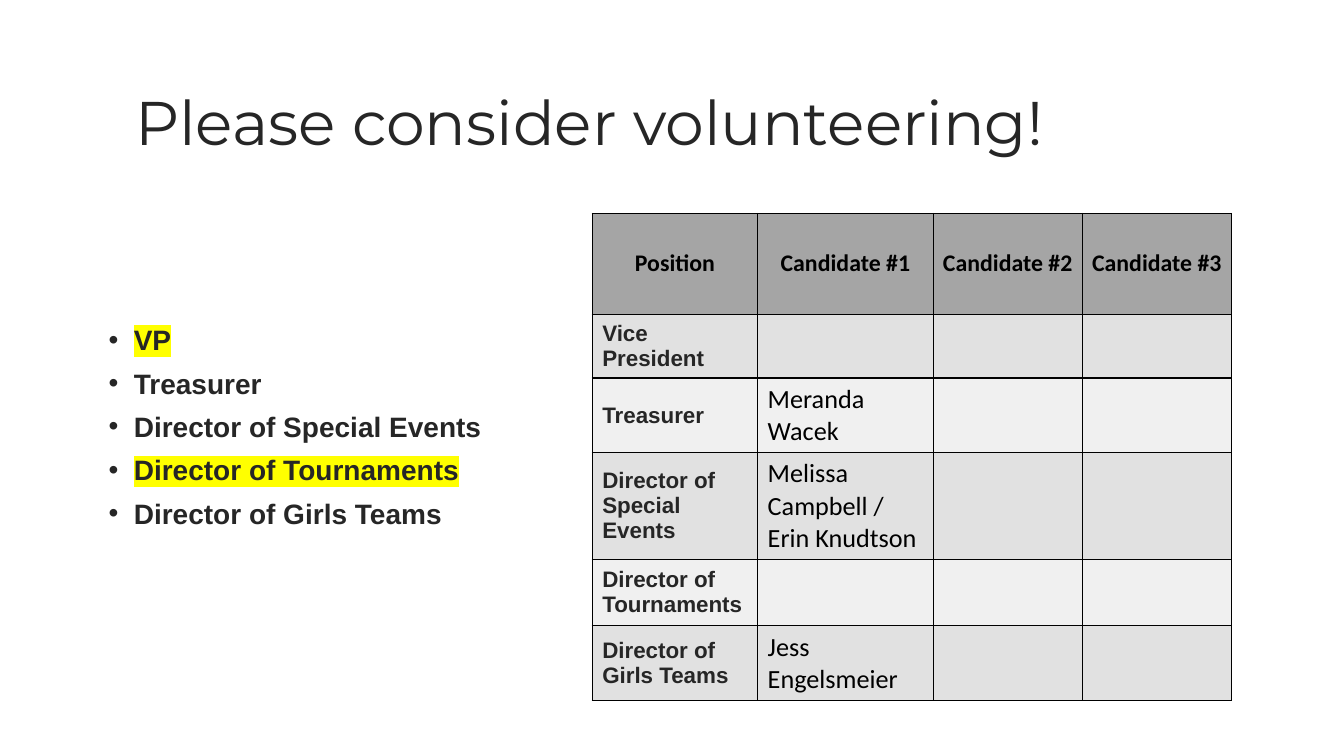
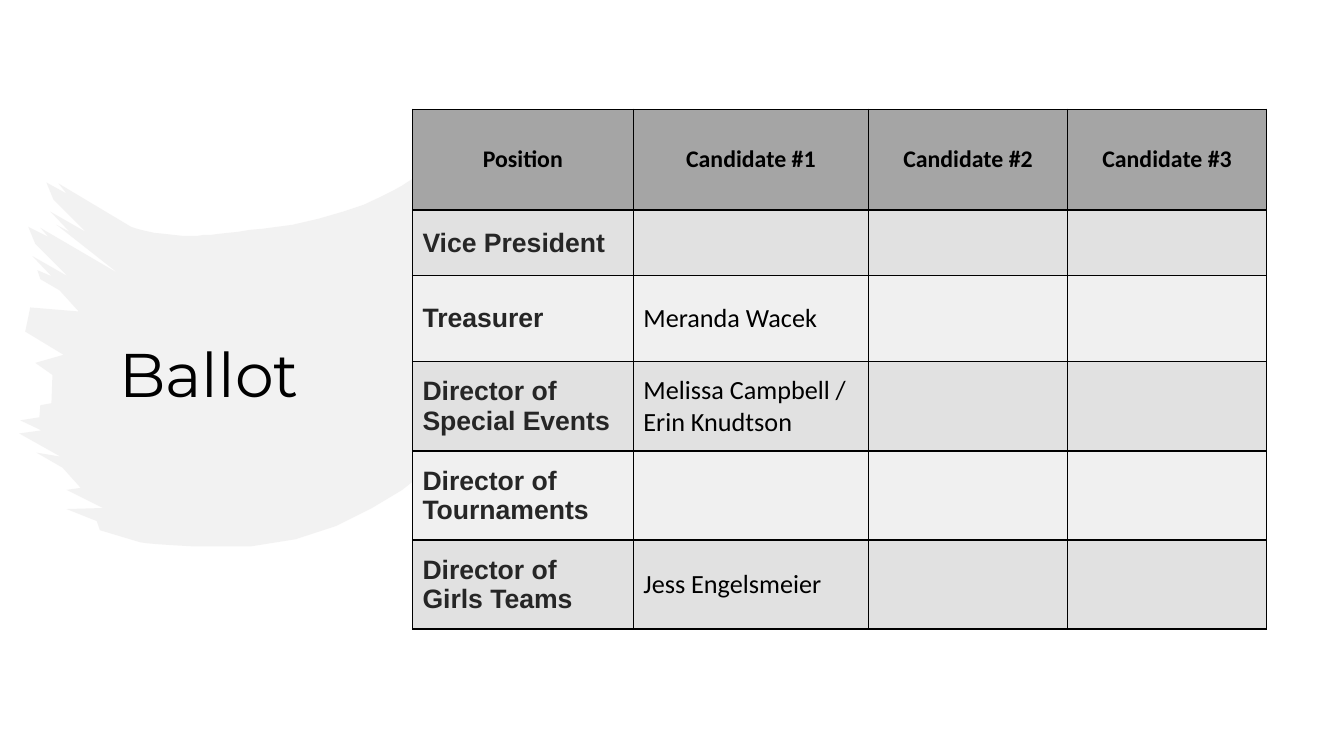
from dataclasses import dataclass

from lxml import etree
from pptx import Presentation
from pptx.dml.color import RGBColor
from pptx.enum.text import MSO_ANCHOR, PP_ALIGN
from pptx.oxml.ns import qn
from pptx.util import Inches, Pt

MIDDLE = MSO_ANCHOR.MIDDLE
CENTER = PP_ALIGN.CENTER
LEFT = PP_ALIGN.LEFT
GRID_COLUMNS, GRID_ROWS = 160, 90
BLANK_LAYOUT = 6


@dataclass(frozen=True)
class Theme:
    dark: str = "262626"
    black: str = "000000"
    header_fill: str = "A5A5A5"
    odd_fill: str = "E1E1E1"
    even_fill: str = "F0F0F0"
    brush_fill: str = "E7E6E6"
    highlight: str = "FFFF00"
    title_font: str = "Montserrat"
    label_font: str = "Arial"
    table_font: str = "Calibri"
    title_size: float = 44
    bullet_size: float = 20
    header_size: float = 17
    name_size: float = 18.7


HEADERS = ["Position", "Candidate #1", "Candidate #2", "Candidate #3"]
CANDIDATES = [
    ("Vice President", ""),
    ("Treasurer", "Meranda Wacek"),
    ("Director of Special Events", "Melissa Campbell / Erin Knudtson"),
    ("Director of Tournaments", ""),
    ("Director of Girls Teams", "Jess Engelsmeier"),
]
OPENINGS = [
    ("VP", True),
    ("Treasurer", False),
    ("Director of Special Events", False),
    ("Director of Tournaments", True),
    ("Director of Girls Teams", False),
]
BRUSH_START = (458, 150)
BRUSH_CURVES = [
    ((500, 225), (514, 290), (514, 320)),
    ((513, 350), (470, 400), (456, 435)),
    ((456, 436), (372, 533), (249, 542)),
    ((229, 544), (150, 540), (139, 538)),
]
BRUSH_BRISTLES = [
    (99, 526), (96, 517), (66, 505), (102, 504), (66, 486), (80, 484),
    (62, 464), (36, 449), (60, 453), (19, 430), (41, 427), (20, 417),
    (39, 414), (40, 402), (51, 400), (52, 372), (35, 360), (63, 352),
    (25, 329), (30, 305), (78, 309), (59, 288), (40, 277), (37, 268),
    (51, 274), (32, 254), (67, 274), (35, 242), (28, 225), (48, 235),
    (40, 226), (117, 271), (56, 223), (69, 230), (50, 210), (85, 230),
    (53, 198), (46, 181), (66, 192), (58, 182), (130, 225),
]
BRUSH_TOP = [
    ((143, 232), (184, 234), (192, 234)),
    ((202, 234), (226, 231), (260, 227)),
    ((342, 220), (400, 184), (402, 182)),
    ((407, 178), (440, 165), BRUSH_START),
]


def curve_points(start, curves, steps=8):
    points = []
    for first, second, end in curves:
        for step in range(1, steps + 1):
            t = step / steps
            weights = ((1 - t) ** 3, 3 * t * (1 - t) ** 2, 3 * t * t * (1 - t), t ** 3)
            controls = (start, first, second, end)
            points.append(tuple(
                round(sum(weight * control[axis]
                          for weight, control in zip(weights, controls)))
                for axis in range(2)))
        start = end
    return points


class Deck:
    def __init__(self, theme):
        self.theme = theme
        self.presentation = Presentation()
        self.presentation.slide_width = Inches(13.33)
        self.presentation.slide_height = Inches(7.5)
        self.slide = None

    def add_slide(self):
        layout = self.presentation.slide_layouts[BLANK_LAYOUT]
        self.slide = self.presentation.slides.add_slide(layout)

    def across(self, columns):
        return round(self.presentation.slide_width * columns / GRID_COLUMNS)

    def down(self, rows):
        return round(self.presentation.slide_height * rows / GRID_ROWS)

    def style(self, paragraph, font, size, color, bold=False):
        for run in paragraph.runs:
            run.font.name = font
            run.font.size = Pt(size)
            run.font.bold = bold
            run.font.color.rgb = RGBColor.from_string(color)

    def text_box(self, left, top, width, height):
        shape = self.slide.shapes.add_textbox(
            self.across(left), self.down(top), self.across(width), self.down(height))
        shape.text_frame.word_wrap = True
        shape.text_frame.vertical_anchor = MIDDLE
        return shape.text_frame

    def title(self, text, box, color):
        text_frame = self.text_box(*box)
        text_frame.text = text
        paragraph = text_frame.paragraphs[0]
        paragraph.line_spacing = 0.9
        self.style(paragraph, self.theme.title_font, self.theme.title_size, color)

    def bullets(self, items, box):
        text_frame = self.text_box(*box)
        text_frame.text = "\n".join(text for text, _ in items)
        for index, (paragraph, (_, marked)) in enumerate(zip(text_frame.paragraphs, items)):
            properties = paragraph._p.get_or_add_pPr()
            properties.set("marL", str(Inches(0.25)))
            properties.set("indent", str(-Inches(0.25)))
            etree.SubElement(properties, qn("a:buFont"), typeface=self.theme.label_font)
            etree.SubElement(properties, qn("a:buChar"), char="•")
            paragraph.space_before = Pt(7 if index else 0)
            self.style(paragraph, self.theme.label_font, self.theme.bullet_size,
                       self.theme.dark, bold=True)
            if marked:
                self.highlight(paragraph.runs[0])

    def highlight(self, run):
        mark = etree.Element(qn("a:highlight"))
        etree.SubElement(mark, qn("a:srgbClr"), val=self.theme.highlight)
        run._r.get_or_add_rPr().find(qn("a:solidFill")).addnext(mark)

    def borders(self, cell):
        properties = cell._tc.get_or_add_tcPr()
        for index, side in enumerate(("a:lnL", "a:lnR", "a:lnT", "a:lnB")):
            line = etree.Element(qn(side), w=str(Pt(1)))
            fill = etree.SubElement(line, qn("a:solidFill"))
            etree.SubElement(fill, qn("a:srgbClr"), val=self.theme.black)
            properties.insert(index, line)

    def cell(self, cell, text, fill, font, size, color, bold, header):
        cell.text = text
        cell.vertical_anchor = MIDDLE
        cell.margin_left = cell.margin_right = Inches(0.07 if header else 0.1)
        cell.margin_top = cell.margin_bottom = Inches(0 if header else 0.05)
        paragraph = cell.text_frame.paragraphs[0]
        paragraph.alignment = CENTER if header else LEFT
        self.style(paragraph, font, size, color, bold)
        cell.fill.solid()
        cell.fill.fore_color.rgb = RGBColor.from_string(fill)
        self.borders(cell)

    def candidate_table(self, left, top, columns, rows, label_size):
        theme = self.theme
        frame = self.slide.shapes.add_table(
            len(rows), len(columns), self.across(left), self.down(top),
            self.across(sum(columns)), self.down(sum(rows)))
        table = frame.table
        for column, width in zip(table.columns, columns):
            column.width = self.across(width)
        for row, height in zip(table.rows, rows):
            row.height = self.down(height)
        header = (theme.table_font, theme.header_size, theme.black, True, True)
        label = (theme.label_font, label_size, theme.dark, True, False)
        name = (theme.table_font, theme.name_size, theme.black, False, False)
        for index, text in enumerate(HEADERS):
            self.cell(table.cell(0, index), text, theme.header_fill, *header)
        for row, texts in enumerate(CANDIDATES, start=1):
            fill = theme.odd_fill if row % 2 else theme.even_fill
            for column in range(len(columns)):
                text = texts[column] if column < len(texts) else ""
                self.cell(table.cell(row, column), text, fill,
                          *(name if column else label))

    def brush(self):
        points = (curve_points(BRUSH_START, BRUSH_CURVES) + BRUSH_BRISTLES
                  + curve_points(BRUSH_BRISTLES[-1], BRUSH_TOP))
        builder = self.slide.shapes.build_freeform(*BRUSH_START, scale=Inches(0.01))
        builder.add_line_segments(points, close=True)
        shape = builder.convert_to_shape()
        shape.shadow.inherit = False
        shape.fill.solid()
        shape.fill.fore_color.rgb = RGBColor.from_string(self.theme.brush_fill)
        color = shape._element.spPr.find(qn("a:solidFill"))[0]
        etree.SubElement(color, qn("a:alpha"), val="50000")
        shape.line.fill.background()


def main():
    theme = Theme()
    deck = Deck(theme)

    deck.add_slide()
    deck.title("Please consider volunteering!", (14.9, 7.2, 125.3, 15.6), theme.dark)
    deck.bullets(OPENINGS, (11.75, 36.5, 48.4, 28.5))
    deck.candidate_table(70.5, 25.4, (19.7, 20.9, 17.75, 17.75),
                         (12, 7.3, 8.9, 12.7, 7.9, 8.9), label_size=16)

    deck.add_slide()
    deck.brush()
    deck.title("Ballot", (13, 9, 45.8, 72), theme.black)
    deck.candidate_table(49.1, 13, (26.3, 28, 23.7, 23.7),
                         (12, 7.8, 10.25, 10.65, 10.6, 10.6), label_size=19)

    deck.presentation.save("out.pptx")


if __name__ == "__main__":
    main()
